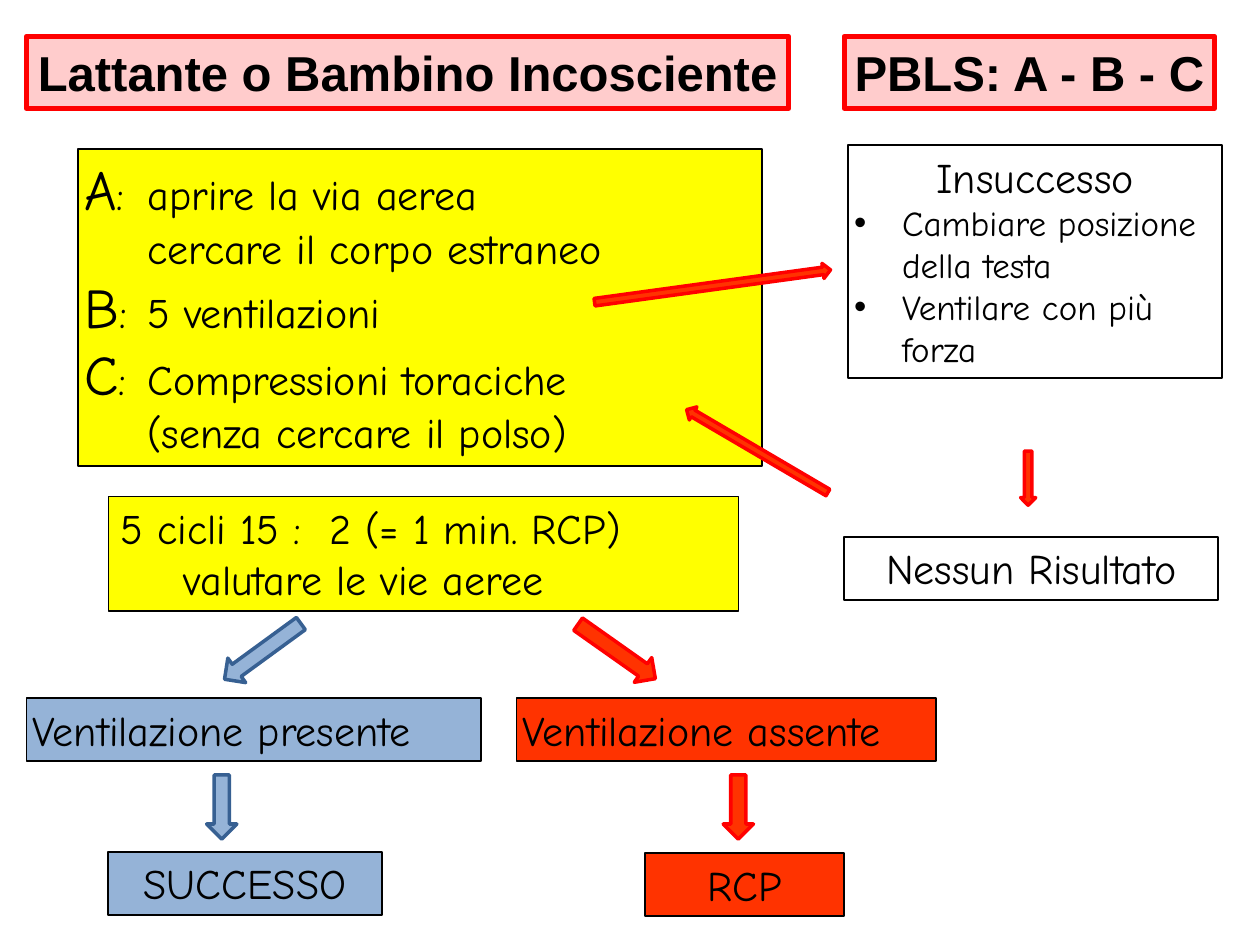
"""Build the PBLS flow chart slide for an unconscious infant or child."""
from lxml.etree import SubElement
from pptx import Presentation
from pptx.dml.color import RGBColor
from pptx.enum.shapes import MSO_SHAPE as SHAPE
from pptx.enum.text import MSO_ANCHOR as ANCHOR, PP_ALIGN as ALIGN
from pptx.oxml.ns import qn
from pptx.util import Inches, Pt

BLACK = RGBColor(0x00, 0x00, 0x00)
PINK = RGBColor(0xFF, 0xCC, 0xCC)
RED = RGBColor(0xFF, 0x00, 0x00)
YELLOW = RGBColor(0xFF, 0xFF, 0x00)
BLUE = RGBColor(0x95, 0xB3, 0xD7)
DARK_BLUE = RGBColor(0x37, 0x60, 0x92)
ORANGE = RGBColor(0xFF, 0x33, 0x00)


def paint(shape, fill, line, weight):
    if fill is None:
        shape.fill.background()
    else:
        shape.fill.solid()
        shape.fill.fore_color.rgb = fill
    shape.line.color.rgb = line
    shape.line.width = Pt(weight)


def write(shape, paragraphs, align, font="Comic Neue", bold=False, inset=0.05, wrap=True):
    frame = shape.text_frame
    frame.word_wrap = wrap
    frame.vertical_anchor = ANCHOR.TOP
    frame.margin_left = frame.margin_right = Inches(inset)
    frame.margin_top = frame.margin_bottom = Inches(0.05)
    for number, runs in enumerate(paragraphs):
        para = frame.add_paragraph() if number else frame.paragraphs[0]
        para.alignment = align
        for text, size in runs:
            span = para.add_run()
            span.text = text
            span.font.name = font
            span.font.size = Pt(size)
            span.font.bold = bold
            span.font.color.rgb = BLACK


deck = Presentation()
deck.slide_width, deck.slide_height = Inches(10), Inches(7.5)
page = deck.slides.add_slide(deck.slide_layouts[5])
shapes = page.shapes

title = shapes.title
title.left, title.top, title.width, title.height = map(Inches, (0.21, 0.29, 6.05, 0.57))
protocol = shapes.add_shape(SHAPE.RECTANGLE, Inches(6.7), Inches(0.29), Inches(2.94), Inches(0.57))
protocol.shadow.inherit = False
for heading, text in ((title, "Lattante o Bambino Incosciente"), (protocol, "PBLS: A - B - C")):
    paint(heading, PINK, RED, 3)
    write(heading, [[(text, 28)]], ALIGN.CENTER, "Arial", bold=True, wrap=False)

steps = [
    [("A", 32), (":\taprire la via aerea", 24)],
    [("\tcercare il corpo estraneo", 24)],
    [("B", 32), (":\t5 ventilazioni", 24)],
    [("C", 32), (":\tCompressioni toraciche", 24)],
    [("\t(senza cercare il polso)", 24)],
]
cycles = [[("5 cicli 15 :  2 (= 1 min. RCP)", 24)], [("\tvalutare le vie aeree", 24)]]
failure = [
    [("Insuccesso", 24)],
    [("Cambiare posizione della testa", 20)],
    [("Ventilare con più forza", 20)],
]
boxes = [
    (0.62, 1.18, 5.43, 2.52, YELLOW, 1, steps, ALIGN.LEFT, 0.05),
    (0.86, 3.94, 5, 0.91, YELLOW, 0.75, cycles, ALIGN.LEFT, 0.1),
    (0.21, 5.54, 3.61, 0.5, BLUE, 1, [[("Ventilazione presente", 24)]], ALIGN.LEFT, 0.05),
    (0.86, 6.76, 2.17, 0.5, BLUE, 1, [[("SUCCESSO", 24)]], ALIGN.CENTER, 0.05),
    (4.1, 5.54, 3.33, 0.5, ORANGE, 1, [[("Ventilazione assente", 24)]], ALIGN.LEFT, 0.05),
    (5.12, 6.77, 1.58, 0.5, ORANGE, 1, [[("RCP", 24)]], ALIGN.CENTER, 0.05),
    (6.7, 4.26, 2.97, 0.5, None, 1, [[("Nessun Risultato", 24)]], ALIGN.CENTER, 0.05),
    (6.73, 1.15, 2.97, 1.85, None, 1, failure, ALIGN.CENTER, 0.05),
]
for left, top, width, height, fill, weight, paragraphs, align, inset in boxes:
    box = shapes.add_shape(SHAPE.RECTANGLE, Inches(left), Inches(top), Inches(width), Inches(height))
    box.shadow.inherit = False
    paint(box, fill, BLACK, weight)
    write(box, paragraphs, align, inset=inset)
    if paragraphs is failure:
        for para in box.text_frame.paragraphs[1:]:
            para.alignment = ALIGN.LEFT
            properties = para._p.get_or_add_pPr()
            properties.set("marL", str(Inches(0.38)))
            properties.set("indent", str(Inches(-0.38)))
            SubElement(properties, qn("a:buFont"), typeface="Arial")
            SubElement(properties, qn("a:buChar"), char="•")

arrows = [
    (SHAPE.LEFT_ARROW, 1.71, 5.05, 0.75, 0.24, 323.9, BLUE, DARK_BLUE),
    (SHAPE.DOWN_ARROW, 1.64, 6.15, 0.24, 0.51, 0, BLUE, DARK_BLUE),
    (SHAPE.LEFT_ARROW, 4.52, 5.05, 0.75, 0.24, 215.2, ORANGE, RED),
    (SHAPE.DOWN_ARROW, 5.74, 6.15, 0.24, 0.51, 0, ORANGE, RED),
    (SHAPE.RIGHT_ARROW, 4.71, 2.21, 1.89, 0.12, 352.2, ORANGE, RED),
    (SHAPE.DOWN_ARROW, 8.1, 3.58, 0.12, 0.43, 0, ORANGE, RED),
    (SHAPE.RIGHT_ARROW, 5.36, 3.52, 1.3, 0.12, 210.4, ORANGE, RED),
]
for kind, left, top, width, height, angle, fill, line in arrows:
    arrow = shapes.add_shape(kind, Inches(left), Inches(top), Inches(width), Inches(height))
    arrow.shadow.inherit = False
    arrow.rotation = angle
    paint(arrow, fill, line, 2)

deck.save("out.pptx")
